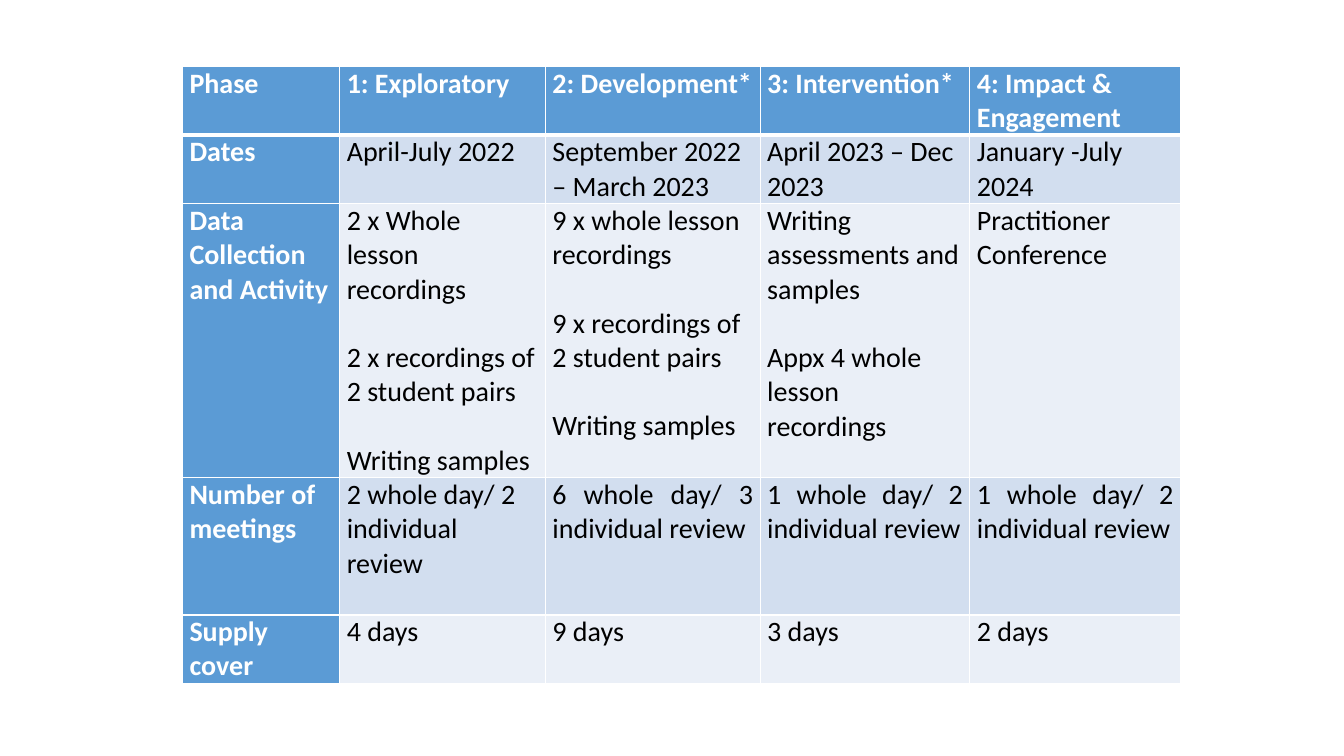
from lxml.etree import SubElement
from pptx import Presentation
from pptx.dml.color import RGBColor
from pptx.enum.text import PP_ALIGN
from pptx.oxml.ns import qn
from pptx.util import Inches, Pt


class Theme:
    font = "Calibri"
    size = Pt(20)
    gap = Pt(24.4)
    head = "5B9BD5"
    bands = ("D2DEEF", "EAEFF7")
    white = "FFFFFF"
    black = "000000"
    thin = Pt(1)
    thick = Pt(3)


PHASES = [
    ["Phase", "1: Exploratory", "2: Development*", "3: Intervention*",
     "4: Impact & Engagement"],
    ["Dates", "April-July 2022", "September 2022 – March 2023",
     "April 2023 – Dec 2023", "January -July 2024"],
    ["Data Collection and Activity",
     "2 x Whole lesson recordings\n2 x recordings of 2 student pairs\nWriting samples",
     "9 x whole lesson recordings\n9 x recordings of 2 student pairs\nWriting samples",
     "Writing assessments and samples\nAppx 4 whole lesson recordings",
     "Practitioner Conference"],
    ["Number of meetings", "2 whole day/ 2 individual review",
     "6 whole day/ 3 individual review", "1 whole day/ 2 individual review",
     "1 whole day/ 2 individual review"],
    ["Supply cover", "4 days", "9 days", "3 days", "2 days"],
]
WIDTHS = (1.56, 2.04, 2.13, 2.08, 2.09)
HEIGHTS = (0.68, 0.68, 2.72, 1.36, 0.68)
JUSTIFY = (5, 5, 4, 2, 1)  # first justified column of each row
INSETS = {"margin_left": Inches(0.07), "margin_right": Inches(0.07),
          "margin_top": 0, "margin_bottom": 0}


def apply(target, values):
    for name, value in values.items():
        setattr(target, name, value)


def border(cell, sides):
    """Draw white cell edges; sides maps L, R, T and B to line widths."""
    props = cell._tc.get_or_add_tcPr()
    for side, width in sides.items():
        line = SubElement(props, qn(f"a:ln{side}"), w=str(width))
        fill = SubElement(line, qn("a:solidFill"))
        SubElement(fill, qn("a:srgbClr"), val=Theme.white)


def write(cell, text, align, head):
    cell.text = text
    color = Theme.white if head else Theme.black
    for index, para in enumerate(cell.text_frame.paragraphs):
        apply(para, {"alignment": align,
                     "space_before": Theme.gap if index else Pt(0)})
        for run in para.runs:
            apply(run.font, {"name": Theme.font, "size": Theme.size, "bold": head})
            run.font.color.rgb = RGBColor.from_string(color)


def style(cell, row, head):
    apply(cell, INSETS)
    border(cell, {"L": Theme.thin, "R": Theme.thin,
                  "T": Theme.thick if row == 1 else Theme.thin,
                  "B": Theme.thick if row == 0 else Theme.thin})
    cell.fill.solid()
    color = Theme.head if head else Theme.bands[(row - 1) % 2]
    cell.fill.fore_color.rgb = RGBColor.from_string(color)


def plan(slide, left, top, width, height):
    """Place the phase table, sharing the box out by WIDTHS and HEIGHTS."""
    table = slide.shapes.add_table(len(HEIGHTS), len(WIDTHS),
                                   left, top, width, height).table
    for col, share in zip(table.columns, WIDTHS):
        col.width = int(width * share / sum(WIDTHS))
    for row, share in zip(table.rows, HEIGHTS):
        row.height = int(height * share / sum(HEIGHTS))
    for r, texts in enumerate(PHASES):
        for c, text in enumerate(texts):
            cell = table.cell(r, c)
            head = r == 0 or c == 0
            style(cell, r, head)
            align = PP_ALIGN.JUSTIFY if c >= JUSTIFY[r] else PP_ALIGN.LEFT
            write(cell, text, align, head)


def main():
    deck = Presentation()
    apply(deck, {"slide_width": Inches(13.33), "slide_height": Inches(7.5)})
    slide = deck.slides.add_slide(deck.slide_layouts[6])
    plan(slide, Inches(1.81), Inches(0.66), Inches(9.9), Inches(6.12))
    deck.save("out.pptx")


if __name__ == "__main__":
    main()
